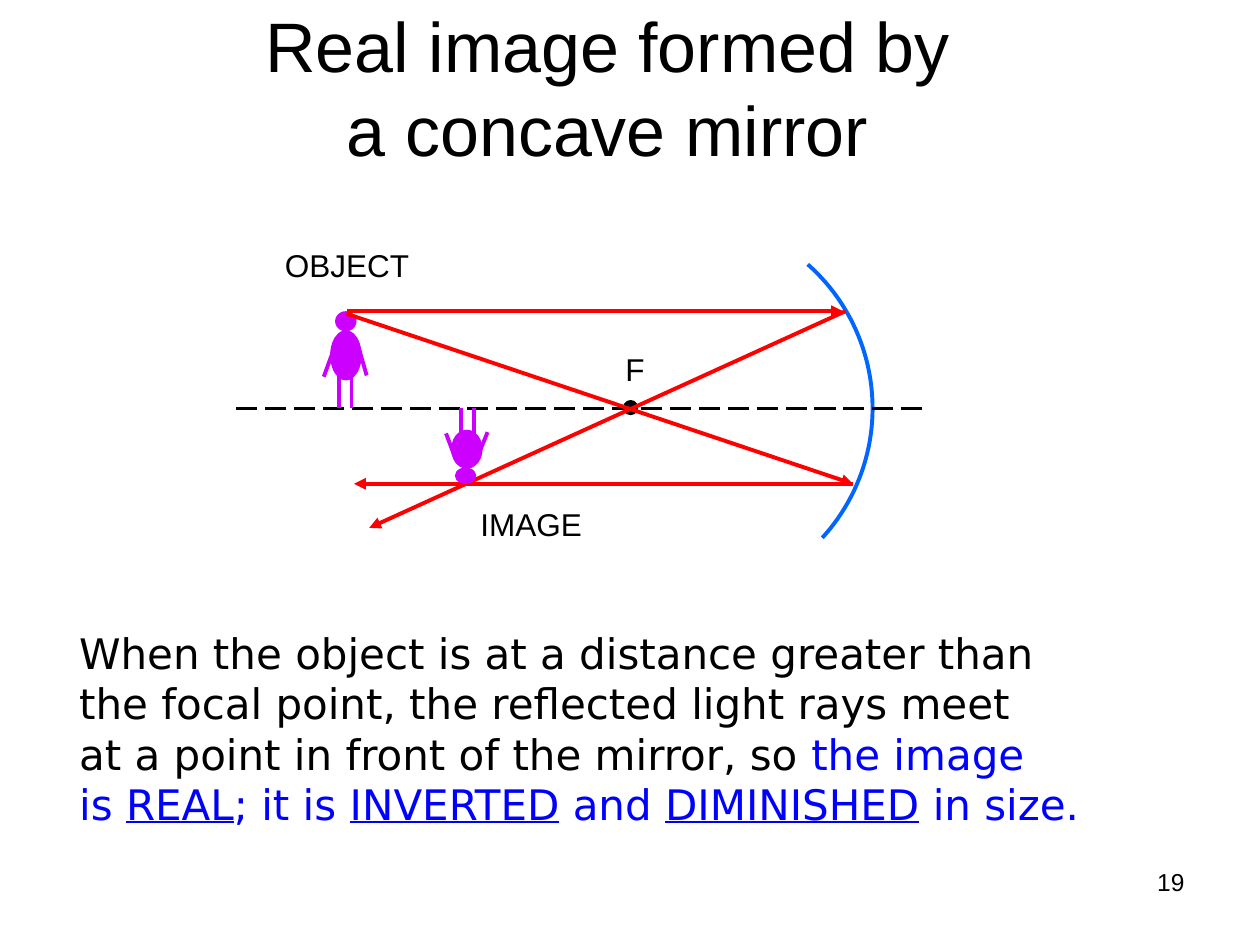
from math import cos, radians, sin

from lxml.etree import SubElement
from pptx import Presentation
from pptx.dml.color import RGBColor
from pptx.enum.dml import MSO_LINE as Dash
from pptx.enum.shapes import MSO_CONNECTOR as Link, MSO_SHAPE as Shape
from pptx.enum.text import MSO_ANCHOR as Anchor, MSO_AUTO_SIZE as Fit, PP_ALIGN as Align
from pptx.oxml.ns import qn
from pptx.util import Inches, Pt

BLACK = RGBColor(0, 0, 0)
RED = RGBColor(0xFF, 0, 0)
BLUE = RGBColor(0, 0, 0xFF)
MIRROR = RGBColor(0, 0x66, 0xFF)
PURPLE = RGBColor(0xCC, 0, 0xFF)
AXIS = 3.24


def write(frame, paras, size=18, face="Arial", align=Align.CENTER, anchor=Anchor.TOP,
          wrap=False, fit=Fit.SHAPE_TO_FIT_TEXT):
    """Fill a frame with paragraphs of (text, colour, underline) runs."""
    frame.word_wrap, frame.auto_size = wrap, fit
    frame.vertical_anchor = anchor
    for i, runs in enumerate(paras):
        para = frame.add_paragraph() if i else frame.paragraphs[0]
        para.alignment = align
        for text, color, under in runs:
            for j, part in enumerate(text.split("\n")):
                if j:
                    para.add_line_break()
                run = para.add_run()
                run.text = part
                font = run.font
                font.name, font.size = face, Pt(size)
                font.color.rgb = color
                if under:
                    font.underline = True


def label(slide, box, paras, **style):
    """Add a text box."""
    area = slide.shapes.add_textbox(*map(Inches, box))
    write(area.text_frame, paras, **style)


def line(slide, start, end, color, width=2.25, dash=None, arrow=False):
    """Add a straight line, dashed or with an arrowhead if asked."""
    link = slide.shapes.add_connector(Link.STRAIGHT, *map(Inches, start + end))
    link.line.color.rgb = color
    link.line.width = Pt(width)
    if dash:
        link.line.dash_style = dash
    if arrow:
        SubElement(link.line._get_or_add_ln(), qn("a:tailEnd"), type="triangle")
    SubElement(link._element.spPr, qn("a:effectLst"))


def oval(slide, box, color, turn=0, edge=False):
    """Add a filled ellipse."""
    shape = slide.shapes.add_shape(Shape.OVAL, *map(Inches, box))
    shape.shadow.inherit = False
    shape.fill.solid()
    shape.fill.fore_color.rgb = color
    shape.rotation = turn
    if edge:
        shape.line.color.rgb = color
        shape.line.width = Pt(0.75)
    else:
        shape.line.fill.background()


def person(slide, body, head, arms, legs, hip, turn=0):
    """Draw a figure standing on, or hanging from, the axis."""
    for box in (body, head):
        oval(slide, box, PURPLE, turn)
    for start, end in arms:
        line(slide, start, end, PURPLE)
    for x in legs:
        line(slide, (x, hip), (x, AXIS), PURPLE)


def mirror(slide, mid, radius, first, last, steps=48):
    """Draw the mirror as an open arc."""
    turns = [radians(first + (last - first) * i / steps) for i in range(steps + 1)]
    spots = [(Inches(mid + radius * cos(t)), Inches(AXIS + radius * sin(t))) for t in turns]
    build = slide.shapes.build_freeform(*spots[0])
    build.add_line_segments(spots[1:], close=False)
    arc = build.convert_to_shape()
    arc.shadow.inherit = False
    arc.fill.background()
    arc.line.color.rgb = MIRROR
    arc.line.width = Pt(2.25)


def main():
    """Build the slide and save it."""
    deck = Presentation()
    deck.slide_width, deck.slide_height = Inches(10), Inches(7.5)
    slide = deck.slides.add_slide(deck.slide_layouts[5])

    title = slide.shapes.title
    title.left, title.top, title.width, title.height = map(Inches, (0.32, 0.06, 9, 1.25))
    write(title.text_frame, [[("Real image formed by\na concave mirror", BLACK, False)]],
          size=40, anchor=Anchor.MIDDLE, wrap=True, fit=Fit.NONE)
    label(slide, (7.17, 6.83, 2.33, 0.52), [[("19", BLACK, False)]],
          size=14, align=Align.RIGHT, wrap=True, fit=Fit.NONE)

    mirror(slide, 5.4, 1.525, -48.5, 42.4)
    line(slide, (7.32, AXIS), (1.86, AXIS), BLACK, 1.5, Dash.LONG_DASH)
    oval(slide, (4.95, 3.18, 0.11, 0.11), BLACK, edge=True)

    person(slide, (2.62, 2.62, 0.25, 0.4), (2.66, 2.47, 0.17, 0.16),
           [((2.65, 2.77), (2.57, 2.99)), ((2.85, 2.77), (2.91, 2.98))],
           (2.69, 2.79), 2.94)
    rays = [((2.75, 2.47), (6.69, 2.47)), ((6.71, 2.47), (2.93, 4.19)),
            ((2.75, 2.49), (6.77, 3.84)), ((6.77, 3.84), (2.81, 3.84))]
    for start, end in rays:
        line(slide, start, end, RED, arrow=True)
    person(slide, (3.58, 3.41, 0.25, 0.31), (3.61, 3.71, 0.17, 0.13),
           [((3.8, 3.6), (3.87, 3.43)), ((3.6, 3.6), (3.54, 3.44))],
           (3.76, 3.66), 3.47, turn=180)

    names = [("OBJECT", 2.16, 1.9, 1.19), ("IMAGE", 3.71, 3.96, 1.01), ("F", 4.86, 2.73, 0.36)]
    for text, left, top, width in names:
        label(slide, (left, top, width, 0.4), [[(text, BLACK, False)]])

    note = [
        [("When the object is at a distance greater than\n"
          "the focal point, the reflected light rays meet", BLACK, False)],
        [("at a point in front of the mirror, so ", BLACK, False),
         ("the image\nis ", BLUE, False), ("REAL", BLUE, True),
         ("; it is ", BLUE, False), ("INVERTED", BLUE, True),
         (" and ", BLUE, False), ("DIMINISHED", BLUE, True),
         (" in size.", BLUE, False)],
    ]
    label(slide, (0.53, 4.93, 8.67, 1.72), note, size=24, face="DejaVu Sans", align=Align.LEFT)

    deck.save("out.pptx")


if __name__ == "__main__":
    main()
